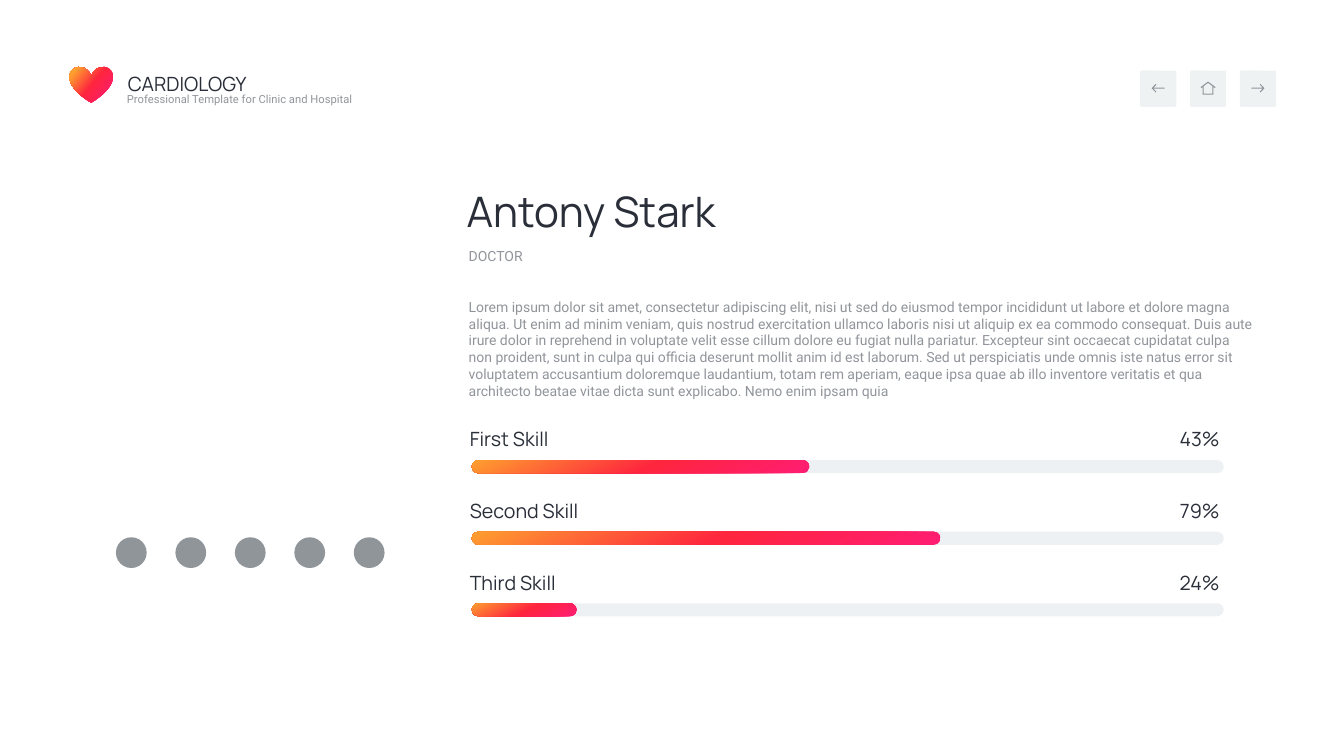
from lxml import etree
from pptx import Presentation
from pptx.dml.color import RGBColor
from pptx.enum.shapes import MSO_SHAPE
from pptx.enum.text import MSO_ANCHOR, MSO_AUTO_SIZE, PP_ALIGN
from pptx.oxml.ns import qn
from pptx.util import Emu, Inches, Pt

ROUNDED = MSO_SHAPE.ROUNDED_RECTANGLE
OVAL = MSO_SHAPE.OVAL
HEART = MSO_SHAPE.HEART
TOP = MSO_ANCHOR.TOP
MIDDLE = MSO_ANCHOR.MIDDLE
LEFT = PP_ALIGN.LEFT
RIGHT = PP_ALIGN.RIGHT
GROW = MSO_AUTO_SIZE.SHAPE_TO_FIT_TEXT

COLORS = {
    "ink": "292E38", "muted": "91959B", "icon": "90959C", "social": "90959A",
    "button": "EFF2F3", "track": "EEF1F3",
    "pink": "FE1D72", "red": "FE253E", "orange": "FE9F2F",
}
FONTS = {"heading": "Manrope", "body": "Roboto"}

ARROW = [(0.65, 0), (0.25, 0.42), (0.18, 0.35), (0.47, 0.05), (-0.65, 0.05),
         (-0.65, -0.05), (0.47, -0.05), (0.18, -0.35), (0.25, -0.42)]
BACK_ARROW = [(-x, y) for x, y in ARROW]
HOUSE = [(0, -0.65), (0.74, -0.1), (0.68, -0.01), (0.53, -0.12), (0.53, 0.65),
         (-0.53, 0.65), (-0.53, -0.12), (-0.68, -0.01), (-0.74, -0.1)]
HOUSE_INSIDE = [(0, -0.52), (-0.43, -0.2), (-0.43, 0.55), (0.43, 0.55), (0.43, -0.2)]

BIOGRAPHY = (
    "Lorem ipsum dolor sit amet, consectetur adipiscing elit, nisi ut sed do eiusmod "
    "tempor incididunt ut labore et dolore magna aliqua. Ut enim ad minim veniam, quis "
    "nostrud exercitation ullamco laboris nisi ut aliquip ex ea commodo consequat. Duis "
    "aute irure dolor in reprehend in voluptate velit esse cillum dolore eu fugiat nulla "
    "pariatur. Excepteur sint occaecat cupidatat culpa non proident, sunt in culpa qui "
    "officia deserunt mollit anim id est laborum. Sed ut perspiciatis unde omnis iste "
    "natus error sit voluptatem accusantium doloremque laudantium, totam rem aperiam, "
    "eaque ipsa quae ab illo inventore veritatis et qua architecto beatae vitae dicta "
    "sunt explicabo. Nemo enim ipsam quia"
)
SKILLS = [("First Skill", "43%", 33.5), ("Second Skill", "79%", 46.5), ("Third Skill", "24%", 10.4)]


class SlideBuilder:
    columns = 133.33
    rows = 75

    def __init__(self, presentation):
        presentation.slide_width = Inches(13.33)
        presentation.slide_height = Inches(7.5)
        self.column = presentation.slide_width / self.columns
        self.row = presentation.slide_height / self.rows
        self.slide = presentation.slides.add_slide(presentation.slide_layouts[6])

    def place(self, column, row):
        return Emu(round(column * self.column)), Emu(round(row * self.row))

    def paint(self, shape, color):
        shape.shadow.inherit = False
        shape.line.fill.background()
        shape.fill.solid()
        shape.fill.fore_color.rgb = RGBColor.from_string(COLORS[color])

    def shape(self, kind, column, row, width, height, color, rounding=None):
        shape = self.slide.shapes.add_shape(
            kind, *self.place(column, row), *self.place(width, height))
        if rounding is not None:
            shape.adjustments[0] = rounding
        self.paint(shape, color)
        return shape

    def gradient(self, shape, stops, angle):
        shape.fill.gradient()
        gradient = shape.fill._xPr.find(qn("a:gradFill"))
        for child in list(gradient):
            gradient.remove(child)
        stop_list = etree.SubElement(gradient, qn("a:gsLst"))
        for position, color in stops:
            stop = etree.SubElement(stop_list, qn("a:gs"), pos=str(position * 1000))
            etree.SubElement(stop, qn("a:srgbClr"), val=COLORS[color])
        etree.SubElement(gradient, qn("a:lin"), ang=str(angle * 60000), scaled="0")

    def outline(self, column, row, contours, color):
        builder = None
        for contour in contours:
            points = [self.place(column + x, row + y) for x, y in contour]
            if builder is None:
                builder = self.slide.shapes.build_freeform(*points[0])
            else:
                builder.move_to(*points[0])
            builder.add_line_segments(points[1:], close=True)
        self.paint(builder.convert_to_shape(), color)

    def text(self, words, column, row, width, height, size, font, color,
             align=LEFT, anchor=TOP, inset=0.03):
        box = self.slide.shapes.add_textbox(
            *self.place(column, row), *self.place(width, height))
        frame = box.text_frame
        frame.word_wrap = True
        frame.auto_size = GROW
        frame.vertical_anchor = anchor
        frame.margin_left = frame.margin_right = Inches(inset)
        frame.margin_top = frame.margin_bottom = Inches(inset)
        paragraph = frame.paragraphs[0]
        paragraph.text = words
        paragraph.alignment = align
        paragraph.font.size = Pt(size)
        paragraph.font.name = FONTS[font]
        paragraph.font.color.rgb = RGBColor.from_string(COLORS[color])

    def button(self, column, contours):
        self.shape(ROUNDED, column, 7, 3.6, 3.6, "button", 0.05)
        self.outline(column + 1.8, 8.75, contours, "icon")

    def skill(self, row, name, percent, filled):
        self.shape(ROUNDED, 46.8, row + 3.55, 74.6, 1.3, "track", 0.5)
        self.text(name, 46.3, row, 21.9, 2.9, 14, "heading", "ink")
        self.text(percent, 110.8, row, 10.5, 2.9, 14, "heading", "ink", align=RIGHT)
        bar = self.shape(ROUNDED, 46.8, row + 3.55, filled, 1.3, "red", 0.5)
        self.gradient(bar, [(1, "pink"), (47, "red"), (100, "orange")], 243)


def main():
    presentation = Presentation()
    builder = SlideBuilder(presentation)

    heart = builder.shape(HEART, 6.9, 6.6, 4.3, 3.6, "red")
    builder.gradient(heart, [(8, "pink"), (49, "red"), (88, "orange")], 219)
    builder.text("CARDIOLOGY", 12.1, 6.5, 15.6, 3.5, 14, "heading", "ink", inset=0.06)
    builder.text("Professional Template for Clinic and Hospital", 12, 8.6, 34.7, 2.5,
                 8, "body", "muted", anchor=MIDDLE, inset=0.06)

    for index, contours in enumerate([[BACK_ARROW], [HOUSE, HOUSE_INSIDE], [ARROW]]):
        builder.button(113.1 + index * 4.95, contours)

    builder.text("Antony Stark", 46, 18.1, 36.9, 5.6, 30, "heading", "ink")
    builder.text("DOCTOR", 46.2, 24.3, 8, 2.2, 10, "body", "muted", anchor=MIDDLE)
    builder.text(BIOGRAPHY, 46.2, 29.3, 78.3, 10.7, 10, "body", "muted")

    for index in range(5):
        builder.shape(OVAL, 11.5 + index * 5.9, 53.3, 3.05, 3.05, "social")

    for index, skill in enumerate(SKILLS):
        builder.skill(42.1 + index * 7.1, *skill)

    presentation.save("out.pptx")


if __name__ == "__main__":
    main()
